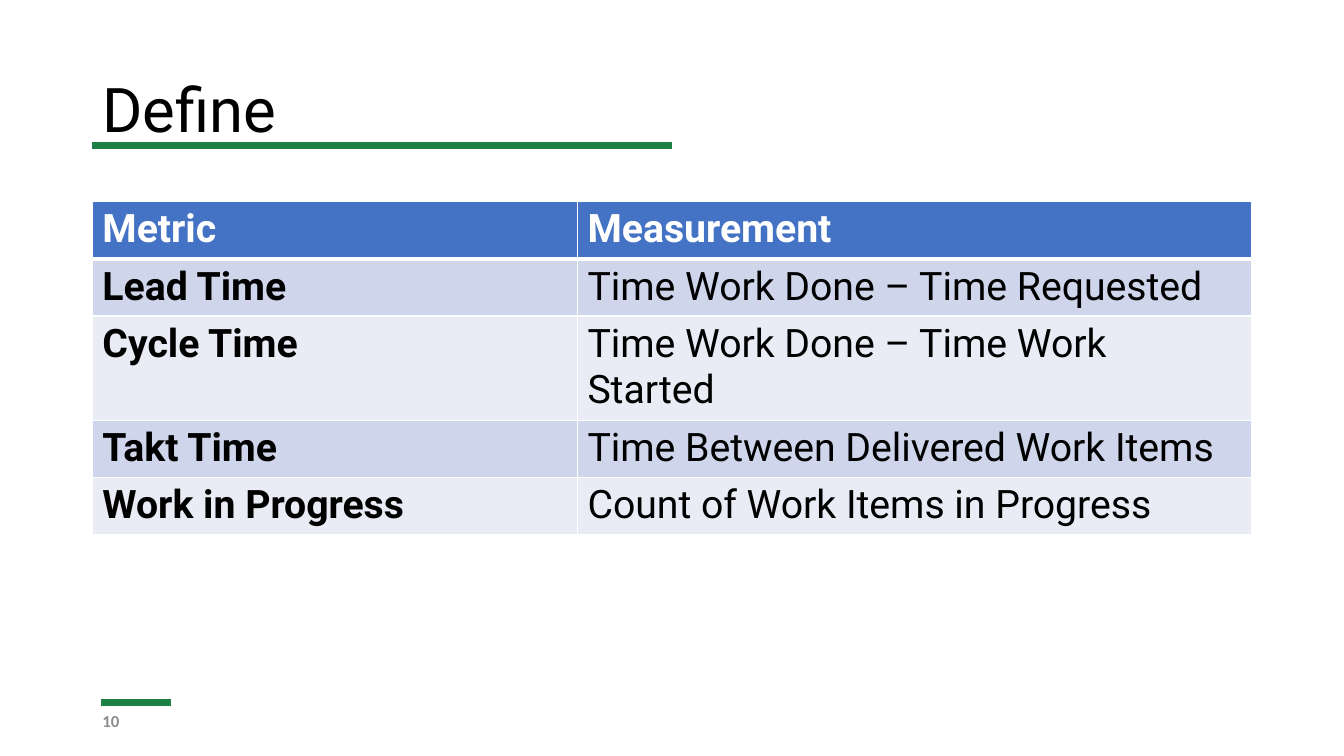
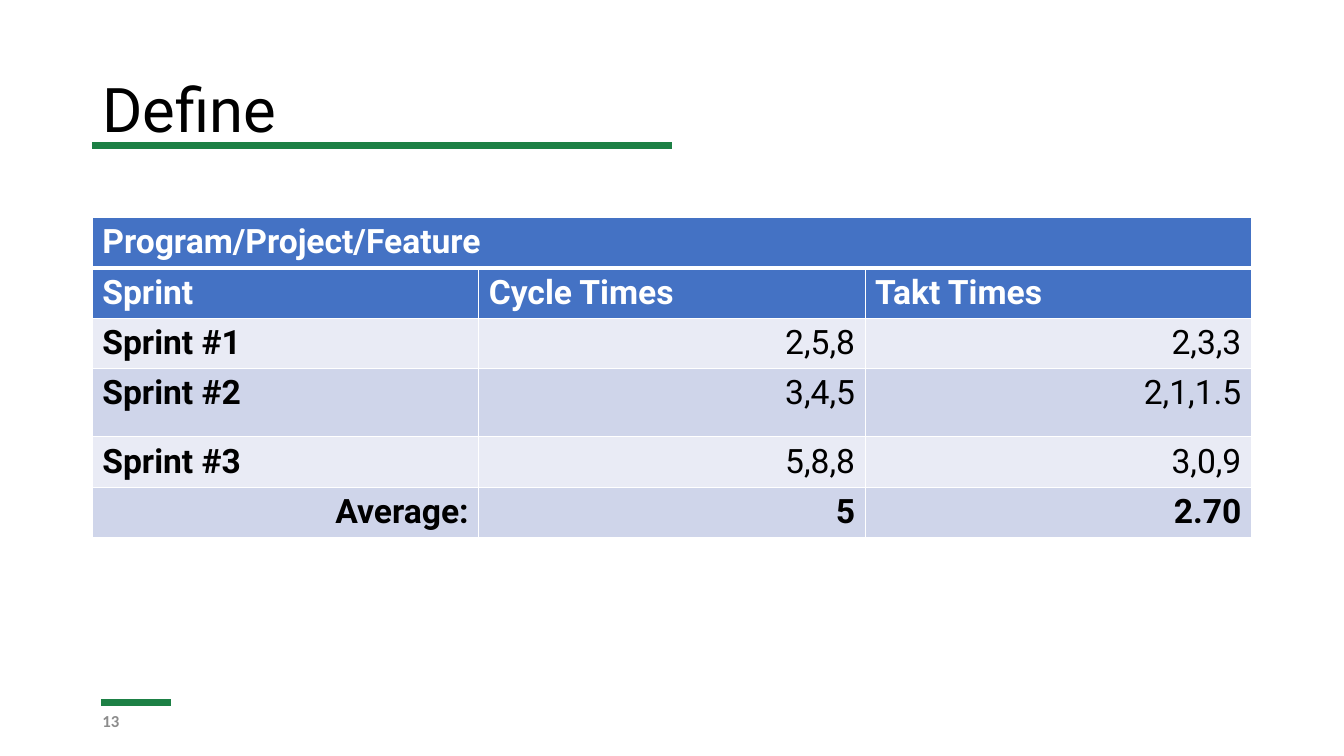
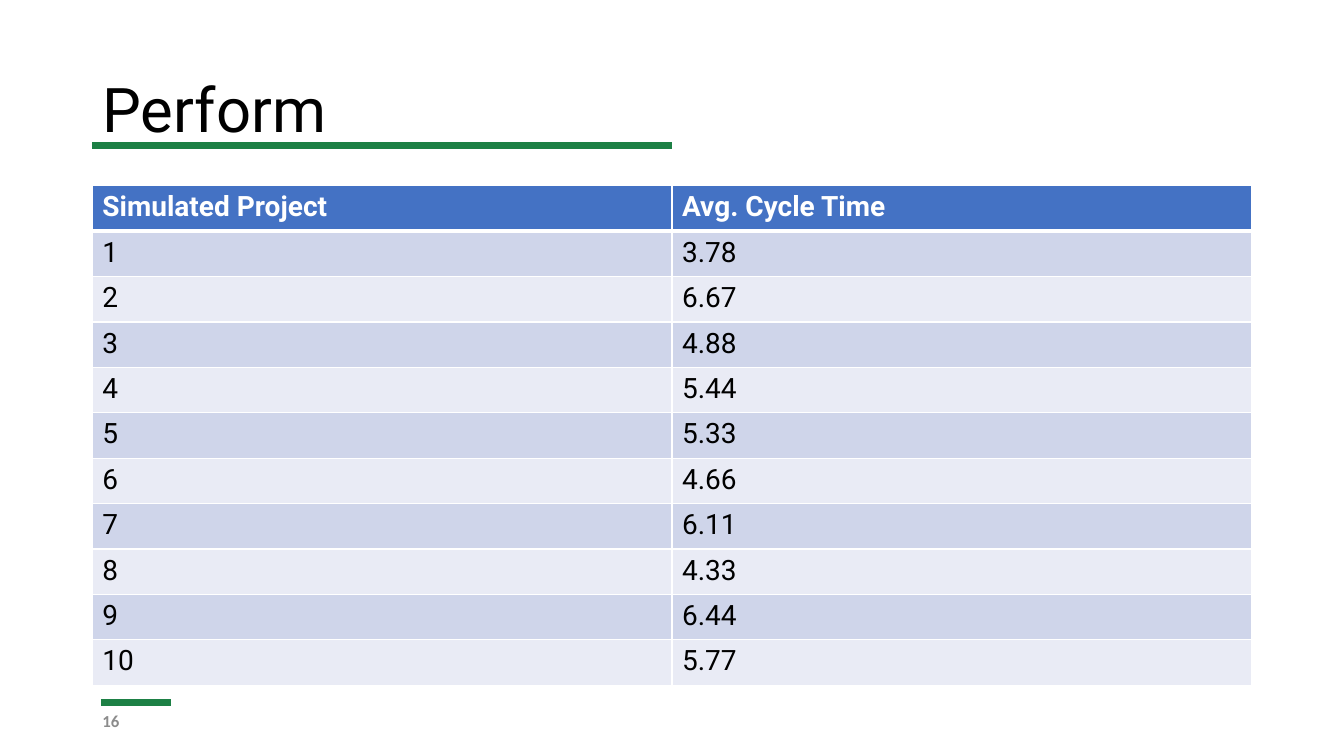
from lxml.etree import SubElement
from pptx import Presentation
from pptx.dml.color import RGBColor
from pptx.enum.shapes import MSO_CONNECTOR
from pptx.enum.text import MSO_ANCHOR, PP_ALIGN
from pptx.oxml.ns import qn
from pptx.util import Pt

PX = 9525
GREEN = RGBColor(0x1D, 0x80, 0x45)
BLUE = RGBColor(0x44, 0x72, 0xC4)
DARK = RGBColor(0xCF, 0xD5, 0xEA)
LIGHT = RGBColor(0xE9, 0xEB, 0xF5)
GREY = RGBColor(0x8C, 0x8C, 0x8C)
BLACK = RGBColor(0, 0, 0)
WHITE = RGBColor(255, 255, 255)
LEFT, WIDTH = 88, 1104
RULES = [(96, 163, 669), (LEFT, 640, 139)]

PAGES = [
    dict(title="Define", number="10", top=192, size=28, cols=[462, 642],
         heights=[39] * 5, heads=1, keyed=True, right=False, total=False,
         rows=[
             ["Metric", "Measurement"],
             ["Lead Time", "Time Work Done – Time Requested"],
             ["Cycle Time", "Time Work Done – Time Work Started"],
             ["Takt Time", "Time Between Delivered Work Items"],
             ["Work in Progress", "Count of Work Items in Progress"],
         ]),
    dict(title="Define", number="13", top=207, size=24, cols=[368] * 3,
         heights=[23, 39, 39, 65, 39, 39], heads=2, keyed=True, right=True, total=True,
         rows=[
             ["Program/Project/Feature"],
             ["Sprint", "Cycle Times", "Takt Times"],
             ["Sprint #1", "2,5,8", "2,3,3"],
             ["Sprint #2", "3,4,5", "2,1,1.5"],
             ["Sprint #3", "5,8,8", "3,0,9"],
             ["Average:", "5", "2.70"],
         ]),
    dict(title="Perform", number="16", top=177, size=20, cols=[552] * 2,
         heights=[476 / 11] * 11, heads=1, keyed=False, right=False, total=False,
         rows=[
             ["Simulated Project", "Avg. Cycle Time"],
             ["1", "3.78"],
             ["2", "6.67"],
             ["3", "4.88"],
             ["4", "5.44"],
             ["5", "5.33"],
             ["6", "4.66"],
             ["7", "6.11"],
             ["8", "4.33"],
             ["9", "6.44"],
             ["10", "5.77"],
         ]),
]


def write(para, text, size, color, bold=False, face="Roboto"):
    run = para.add_run()
    run.text = text
    run.font.name = face
    run.font.size = Pt(size)
    run.font.bold = bold
    run.font.color.rgb = color


def border(cell, side, width):
    line = SubElement(cell._tc.get_or_add_tcPr(), qn("a:ln" + side), w=str(Pt(width)))
    fill = SubElement(line, qn("a:solidFill"))
    SubElement(fill, qn("a:srgbClr"), val=str(WHITE))


deck = Presentation()
deck.slide_width, deck.slide_height = 1280 * PX, 720 * PX

for page in PAGES:
    slide = deck.slides.add_slide(deck.slide_layouts[6])
    for start, end, y in RULES:
        rule = slide.shapes.add_connector(
            MSO_CONNECTOR.STRAIGHT, start * PX, y * PX, end * PX, y * PX)
        rule.line.color.rgb = GREEN
        rule.line.width = Pt(5)
        SubElement(rule._element.spPr, qn("a:effectLst"))

    labels = [
        (page["title"], 38, WIDTH, 139, 44, BLACK, False, "Roboto", 0.9),
        (page["number"], 667, 288, 38, 12, GREY, True, "Calibri", 1.0),
    ]
    for text, top, width, height, size, color, bold, face, space in labels:
        frame = slide.shapes.add_textbox(
            LEFT * PX, top * PX, width * PX, height * PX).text_frame
        frame.word_wrap = True
        frame.vertical_anchor = MSO_ANCHOR.MIDDLE
        frame.paragraphs[0].line_spacing = space
        write(frame.paragraphs[0], text, size, color, bold, face)

    rows, cols, heights = page["rows"], page["cols"], page["heights"]
    table = slide.shapes.add_table(
        len(rows), len(cols), LEFT * PX, page["top"] * PX,
        WIDTH * PX, int(sum(heights) * PX)).table
    for col, width in zip(table.columns, cols):
        col.width = width * PX
    for r, texts in enumerate(rows):
        table.rows[r].height = int(heights[r] * PX)
        head = r < page["heads"]
        last = page["total"] and r == len(rows) - 1
        for c in range(len(cols)):
            cell = table.cell(r, c)
            for side in "LRTB":
                thick = (r, side) in [(0, "B"), (1, "T")]
                border(cell, side, 3 if thick else 1)
            cell.fill.solid()
            cell.fill.fore_color.rgb = BLUE if head else DARK if r % 2 else LIGHT
            if c < len(texts):
                para = cell.text_frame.paragraphs[0]
                if page["right"] and not head and (c or last):
                    para.alignment = PP_ALIGN.RIGHT
                bold = head or last or (page["keyed"] and c == 0)
                write(para, texts[c], page["size"], WHITE if head else BLACK, bold)
        if len(texts) == 1:
            table.cell(r, 0).merge(table.cell(r, len(cols) - 1))

deck.save("out.pptx")
